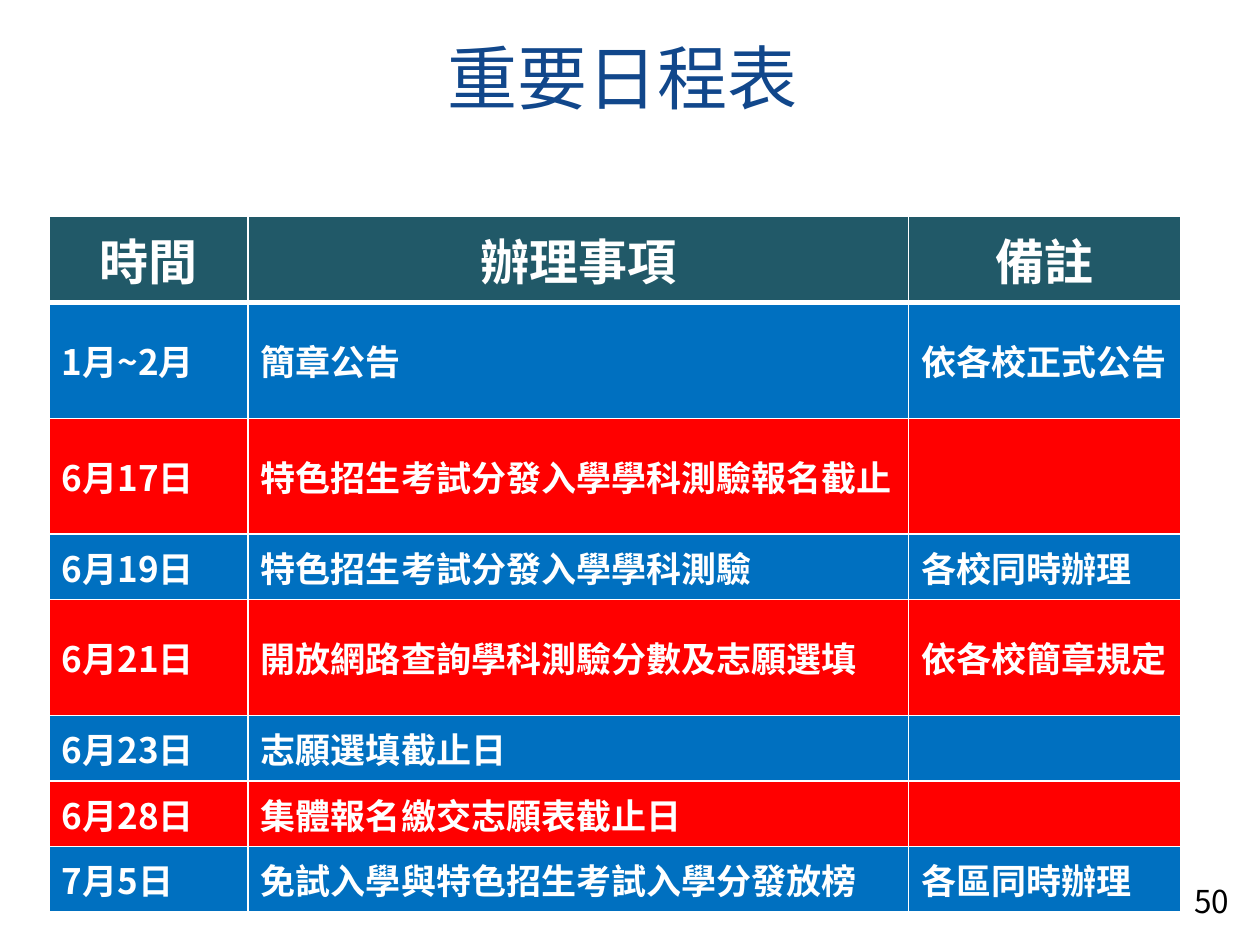
from dataclasses import dataclass
from lxml.etree import SubElement
from pptx import Presentation
from pptx.dml.color import RGBColor
from pptx.enum.text import MSO_ANCHOR, PP_ALIGN
from pptx.oxml import parse_xml
from pptx.oxml.ns import nsdecls, qn
from pptx.util import Inches, Pt


@dataclass(frozen=True)
class Theme:
    face: str = "Noto Sans CJK SC"
    page_face: str = "Noto Sans CJK KR"
    title: str = "11478B"
    head: str = "215968"
    blue: str = "0070C0"
    red: str = "FF0000"
    white: str = "FFFFFF"
    black: str = "000000"
    title_size: int = 40
    head_size: int = 28
    body_size: int = 20
    page_size: int = 18


HEAD = ("時間", "辦理事項", "備註")
DATES = (
    ("1月~2月", "簡章公告", "依各校正式公告"),
    ("6月17日", "特色招生考試分發入學學科測驗報名截止", ""),
    ("6月19日", "特色招生考試分發入學學科測驗", "各校同時辦理"),
    ("6月21日", "開放網路查詢學科測驗分數及志願選填", "依各校簡章規定"),
    ("6月23日", "志願選填截止日", ""),
    ("6月28日", "集體報名繳交志願表截止日", ""),
    ("7月5日", "免試入學與特色招生考試入學分發放榜", "各區同時辦理"),
)
WIDTHS = (1.58, 5.24, 2.16)
HEIGHTS = (0.68, 0.92, 0.92, 0.52, 0.92, 0.52, 0.52, 0.52)


class Deck:
    def __init__(self, theme):
        self.theme = theme
        self.show = Presentation()
        self.show.slide_width, self.show.slide_height = Inches(10), Inches(7.5)
        self.slide = self.show.slides.add_slide(self.show.slide_layouts[5])

    def label(self, frame, text, size, color, face, bold=False, align=PP_ALIGN.LEFT):
        frame.text = text
        para = frame.paragraphs[0]
        para.alignment = align
        for run in para.runs:
            font = run.font
            font.size, font.bold, font.name = Pt(size), bold, face
            font.color.rgb = RGBColor.from_string(color)
            SubElement(run._r.get_or_add_rPr(), qn("a:ea"), typeface=face)

    def title(self, text, left, top, width, height):
        shape = self.slide.shapes.title
        shape.left, shape.top = Inches(left), Inches(top)
        shape.width, shape.height = Inches(width), Inches(height)
        look = self.theme
        self.label(shape.text_frame, text, look.title_size, look.title, look.face,
                   align=PP_ALIGN.CENTER)
        shape.text_frame.vertical_anchor = MSO_ANCHOR.MIDDLE

    def page(self, text, left, top, width, height):
        box = self.slide.shapes.add_textbox(
            Inches(left), Inches(top), Inches(width), Inches(height))
        box.text_frame.word_wrap = True
        look = self.theme
        self.label(box.text_frame, text, look.page_size, look.black, look.page_face)

    def edges(self, cell, above, below):
        """Draw the four cell borders; above and below are widths in points."""
        props = cell._tc.get_or_add_tcPr()
        sides = (("lnL", 1), ("lnR", 1), ("lnT", above), ("lnB", below))
        for spot, (tag, width) in enumerate(sides):
            props.insert(spot, parse_xml(
                f'<a:{tag} {nsdecls("a")} w="{Pt(width)}"><a:solidFill>'
                f'<a:srgbClr val="{self.theme.white}"/></a:solidFill></a:{tag}>'))

    def table(self, rows, widths, heights, left, top):
        look = self.theme
        grid = self.slide.shapes.add_table(
            len(rows), len(widths), Inches(left), Inches(top),
            Inches(sum(widths)), Inches(sum(heights))).table
        for col, width in zip(grid.columns, widths):
            col.width = Inches(width)
        for i, (row, height) in enumerate(zip(rows, heights)):
            grid.rows[i].height = Inches(height)
            if i == 0:
                fill, size, align = look.head, look.head_size, PP_ALIGN.CENTER
            else:
                fill = look.blue if i % 2 else look.red
                size, align = look.body_size, PP_ALIGN.LEFT
            for j, text in enumerate(row):
                cell = grid.cell(i, j)
                cell.vertical_anchor = MSO_ANCHOR.MIDDLE
                cell.fill.solid()
                cell.fill.fore_color.rgb = RGBColor.from_string(fill)
                self.edges(cell, 3 if i == 1 else 1, 3 if i == 0 else 1)
                self.label(cell.text_frame, text, size, look.white, look.face, True, align)


def main():
    deck = Deck(Theme())
    deck.title("重要日程表 ", 0, 0.02, 10, 1.17)
    deck.page("50", 9.38, 6.95, 0.62, 0.4)
    deck.table((HEAD, *DATES), WIDTHS, HEIGHTS, 0.39, 1.72)
    deck.show.save("out.pptx")


if __name__ == "__main__":
    main()
